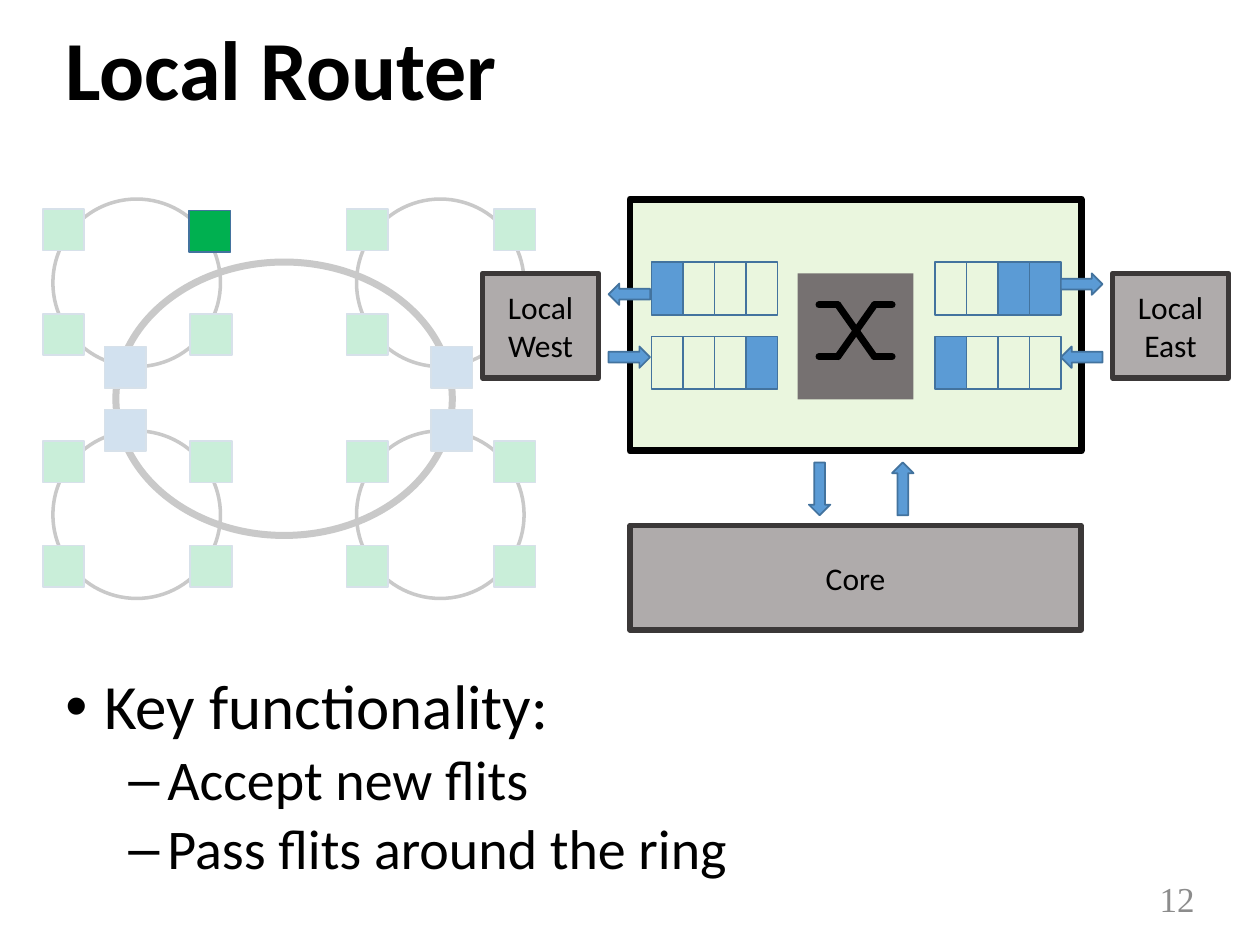
import itertools

import pptx
import pptx.dml.color
import pptx.enum.shapes
import pptx.enum.text
import pptx.oxml.ns
import pptx.util
from lxml import etree

Inches = pptx.util.Inches
Shape = pptx.enum.shapes.MSO_SHAPE
Align = pptx.enum.text.PP_ALIGN
Anchor = pptx.enum.text.MSO_ANCHOR

BLACK, WHITE, GREEN = "000000", "FFFFFF", "00B050"
BLUE, EDGE, GREY = "5B9BD5", "43739E", "AFABAB"


def color(value):
    return pptx.dml.color.RGBColor.from_string(value)


def child(parent, tag, **attributes):
    return etree.SubElement(parent, pptx.oxml.ns.qn(tag), **attributes)


class SlideBuilder:
    """Holds the text style, the page and the shapes being drawn into."""

    font = "Calibri"

    def __init__(self, page):
        self.page = page
        self.shapes = page.shapes

    def group(self):
        self.shapes = self.page.shapes.add_group_shape().shapes

    def end_group(self):
        self.shapes = self.page.shapes

    def shape(self, kind, left, top, width, height, fill=None, line=None,
              weight=1, opacity=None, rotation=0):
        item = self.shapes.add_shape(kind, Inches(left), Inches(top),
                                     Inches(width), Inches(height))
        item.shadow.inherit = False
        item.rotation = rotation
        if fill:
            item.fill.solid()
            item.fill.fore_color.rgb = color(fill)
        else:
            item.fill.background()
        if opacity:
            shade = item._element.spPr.find(
                ".//" + pptx.oxml.ns.qn("a:srgbClr"))
            child(shade, "a:alpha", val=str(opacity * 1000))
        if line:
            item.line.color.rgb = color(line)
            item.line.width = pptx.util.Pt(weight)
        else:
            item.line.fill.background()
        return item

    def stroke(self, start, end):
        line = self.shapes.add_connector(
            pptx.enum.shapes.MSO_CONNECTOR.STRAIGHT,
            *(Inches(value) for value in start + end))
        line.line.color.rgb = color(BLACK)
        line.line.width = pptx.util.Pt(4)
        line._element.spPr.find(pptx.oxml.ns.qn("a:ln")).set("cap", "rnd")
        child(line._element.spPr, "a:effectLst")

    def add_text(self, para, text, size, ink=BLACK, bold=False, font=None):
        span = para.add_run()
        span.text = text
        span.font.name = font or self.font
        span.font.size = pptx.util.Pt(size)
        span.font.bold = bold
        span.font.color.rgb = color(ink)

    def title(self, text):
        box = self.page.shapes.title
        box.left, box.top = Inches(0.42), Inches(0.17)
        box.width, box.height = Inches(9.17), Inches(0.83)
        box.text_frame.vertical_anchor = Anchor.MIDDLE
        para = box.text_frame.paragraphs[0]
        para.alignment = Align.LEFT
        para.line_spacing = 0.9
        self.add_text(para, text, 48, bold=True)

    def text_box(self, left, top, width, height):
        box = self.shapes.add_textbox(Inches(left), Inches(top),
                                      Inches(width), Inches(height))
        box.text_frame.word_wrap = True
        return box.text_frame

    def bullets(self, frame, items):
        for index, (level, text) in enumerate(items):
            para = frame.add_paragraph() if index else frame.paragraphs[0]
            size, mark, indent, gap = ((36, "•", 0.31, 10),
                                       (32, "–", 0.81, 5))[level]
            para.level = level
            para.line_spacing = 0.9
            para.space_before = pptx.util.Pt(gap if index else 0)
            properties = para._p.get_or_add_pPr()
            properties.set("marL", str(Inches(indent)))
            properties.set("indent", str(-Inches(0.31)))
            child(properties, "a:buFont", typeface="Arial")
            child(properties, "a:buChar", char=mark)
            self.add_text(para, text, size)

    def block(self, text, left, top, width):
        item = self.shape(Shape.RECTANGLE, left, top, width, 0.83,
                          GREY, "3B3838", 3)
        item.text_frame.word_wrap = True
        item.text_frame.vertical_anchor = Anchor.MIDDLE
        para = item.text_frame.paragraphs[0]
        para.alignment = Align.CENTER
        self.add_text(para, text, 18)

    def node(self, left, top, fill=GREEN):
        self.shape(Shape.RECTANGLE, left, top, 0.33, 0.33, fill, EDGE)

    def local_ring(self, left, top, missing=None):
        self.group()
        self.shape(Shape.OVAL, left, top, 1.33, 1.33, line=BLACK, weight=2)
        for column, row in itertools.product(range(2), repeat=2):
            if (column, row) != missing:
                self.node(left - 0.08 + 1.17 * column,
                          top + 0.08 + 0.83 * row)
        self.end_group()

    def queue(self, left, top, filled):
        for slot in range(4):
            self.shape(Shape.RECTANGLE, left + 0.25 * slot, top, 0.25, 0.42,
                       BLUE if slot in filled else None, EDGE)


def main():
    deck = pptx.Presentation()
    deck.slide_width, deck.slide_height = Inches(10), Inches(7.5)
    slide = SlideBuilder(deck.slides.add_slide(deck.slide_layouts[5]))

    # Faded ring network with one router highlighted later
    slide.local_ring(0.42, 1.58, missing=(1, 0))
    slide.local_ring(2.83, 1.58, missing=(1, 1))
    slide.local_ring(0.42, 3.42)
    slide.local_ring(2.83, 3.42)
    slide.group()
    slide.shape(Shape.OVAL, 0.92, 2.08, 2.67, 2.17, line=BLACK, weight=4)
    for left, top in itertools.product((0.83, 3.42), (2.75, 3.25)):
        slide.node(left, top, "2E75B6")
    slide.end_group()
    slide.shape(Shape.RECTANGLE, 0, 1.33, 4.67, 3.67, WHITE, opacity=79)

    # Title, bullets and page number
    slide.title("Local Router")
    slide.bullets(slide.text_box(0.42, 5.31, 9.17, 2.03),
                  [(0, "Key functionality:"),
                   (1, "Accept new flits"),
                   (1, "Pass flits around the ring")])
    number = slide.text_box(8.83, 6.93, 0.75, 0.4)
    number.vertical_anchor = Anchor.MIDDLE
    number.paragraphs[0].alignment = Align.RIGHT
    slide.add_text(number.paragraphs[0], "12", 20, "8C8C8C",
                   font="Times New Roman")

    # Router and core, with the arrows between them
    slide.shape(Shape.RECTANGLE, 5, 1.58, 3.58, 2, "92D050", BLACK, 4,
                opacity=19)
    slide.block("Core", 5, 4.17, 3.58)
    for left, rotation in ((6.42, 0), (7.08, 180)):
        slide.shape(Shape.DOWN_ARROW, left, 3.67, 0.17, 0.42, BLUE, EDGE,
                    rotation=rotation)

    # Flit queues
    for left, top, filled in ((7.42, 2.08, (2, 3)), (7.42, 2.67, (0,)),
                              (5.17, 2.08, (0,)), (5.17, 2.67, (3,))):
        slide.queue(left, top, filled)

    # Crossbar
    slide.shape(Shape.RECTANGLE, 6.33, 2.17, 0.92, 1, "767171")
    upper, lower = 2.42, 2.83
    slide.group()
    for left, right in ((6.5, 6.65), (6.94, 7.08)):
        for level in (upper, lower):
            slide.stroke((left, level), (right, level))
    slide.stroke((6.65, upper), (6.94, lower))
    slide.stroke((6.94, upper), (6.65, lower))
    slide.end_group()

    # Links to the neighbouring routers
    for left, top, rotation in ((4.83, 2.75, 0), (8.42, 2.17, 0),
                                (8.42, 2.75, 180), (4.83, 2.25, 180)):
        slide.shape(Shape.RIGHT_ARROW, left, top, 0.33, 0.17, BLUE, EDGE,
                    rotation=rotation)
    slide.block("Local East", 8.83, 2.17, 0.92)
    slide.block("Local West", 3.83, 2.17, 0.92)

    # Highlighted router
    slide.node(1.5, 1.67)

    deck.save("out.pptx")


if __name__ == "__main__":
    main()
